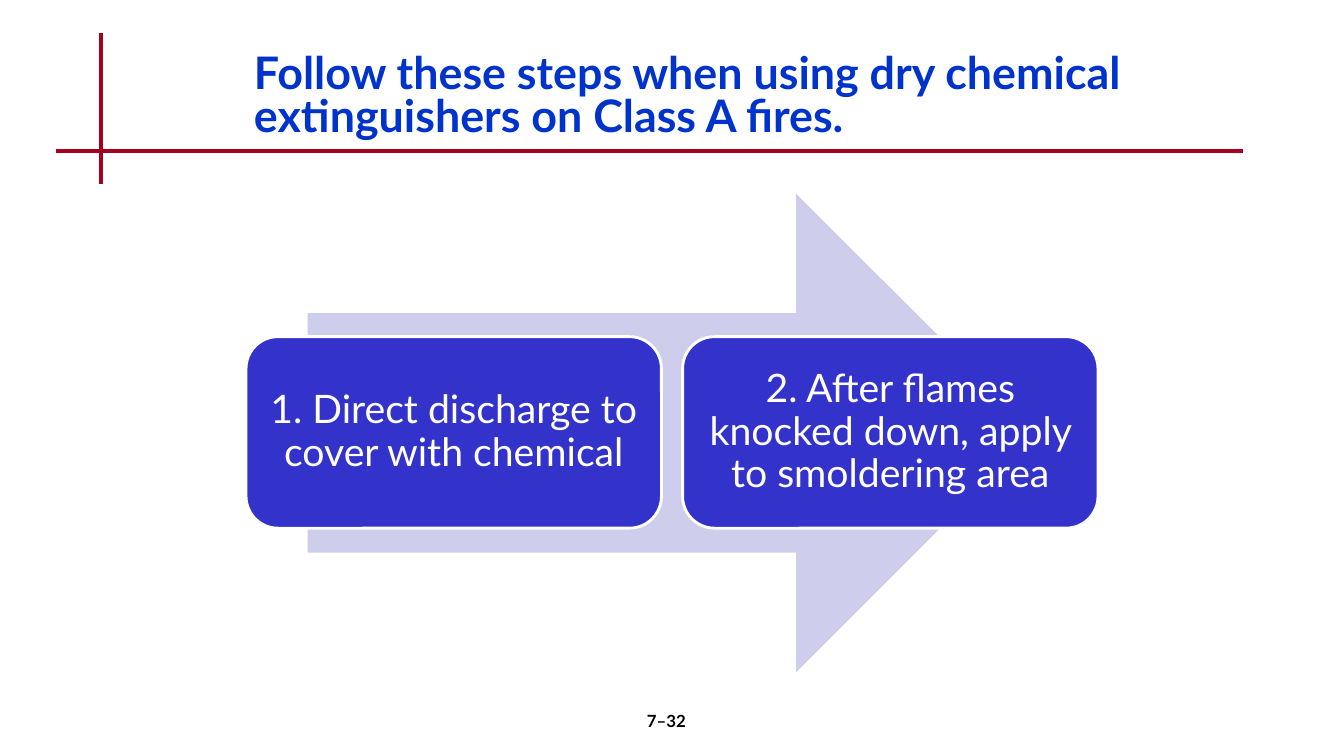
from lxml.etree import SubElement
from pptx import Presentation
from pptx.dml.color import RGBColor
from pptx.enum.shapes import MSO_CONNECTOR, MSO_SHAPE
from pptx.enum.text import MSO_ANCHOR, PP_ALIGN
from pptx.oxml.ns import qn
from pptx.util import Pt

PX = 9144  # EMU per px, 100 px to the inch
FONT = "Lato"
RULE_RED = RGBColor(0xA5, 0x00, 0x21)
ARROW_LILAC = RGBColor(0xCE, 0xCE, 0xEC)
STEP_BLUE = RGBColor(0x33, 0x33, 0xCC)
TITLE_BLUE = RGBColor(0x00, 0x33, 0xCC)
WHITE = RGBColor(0xFF, 0xFF, 0xFF)
BLACK = RGBColor(0x00, 0x00, 0x00)

TITLE = "Follow these steps when using dry chemical extinguishers on Class A fires."
STEPS = [
    "1. Direct discharge to cover with chemical",
    "2. After flames knocked down, apply to smoldering area",
]
STEP_LEFT, STEP_TOP, STEP_WIDTH, STEP_HEIGHT = 244, 334, 412, 190
STEP_PITCH = 433


def px(*lengths):
    return [length * PX for length in lengths]


def add_rule(page, x1, y1, x2, y2):
    rule = page.shapes.add_connector(MSO_CONNECTOR.STRAIGHT, *px(x1, y1, x2, y2))
    rule.line.color.rgb = RULE_RED
    rule.line.width = Pt(3)
    SubElement(rule._element.spPr, qn("a:effectLst"))


def add_filled_shape(page, kind, bounds, fill):
    shape = page.shapes.add_shape(kind, *px(*bounds))
    shape.shadow.inherit = False
    shape.fill.solid()
    shape.fill.fore_color.rgb = fill
    shape.line.fill.background()
    return shape


def write_text(box, text, size, color, bold=False, align=PP_ALIGN.LEFT, spacing=1.0):
    box.text_frame.word_wrap = True
    para = box.text_frame.paragraphs[0]
    para.alignment = align
    para.line_spacing = spacing
    span = para.add_run()
    span.text = text
    span.font.name = FONT
    span.font.size = Pt(size)
    span.font.bold = bold
    span.font.color.rgb = color


def add_step(page, index, text):
    bounds = (STEP_LEFT + index * STEP_PITCH, STEP_TOP, STEP_WIDTH, STEP_HEIGHT)
    step = add_filled_shape(page, MSO_SHAPE.ROUNDED_RECTANGLE, bounds, STEP_BLUE)
    step.line.color.rgb = WHITE
    step.line.width = Pt(2)
    frame = step.text_frame
    frame.vertical_anchor = MSO_ANCHOR.MIDDLE
    frame.margin_left, frame.margin_top, frame.margin_right, frame.margin_bottom = px(12, 12, 12, 12)
    write_text(step, text, 28, WHITE, align=PP_ALIGN.CENTER, spacing=0.9)


def add_label(page, bounds, text, size, color, **style):
    box = page.shapes.add_textbox(*px(*bounds))
    write_text(box, text, size, color, bold=True, **style)


def main():
    deck = Presentation()
    deck.slide_width, deck.slide_height = px(1333, 750)
    page = deck.slides.add_slide(deck.slide_layouts[6])

    add_rule(page, 100, 33, 100, 183)
    add_rule(page, 56, 150, 1233, 150)
    add_filled_shape(page, MSO_SHAPE.RIGHT_ARROW, (305, 192, 722, 475), ARROW_LILAC)
    for index, text in enumerate(STEPS):
        add_step(page, index, text)
    add_label(page, (242, 50, 925, 100), TITLE, 32, TITLE_BLUE, spacing=0.8)
    add_label(page, (522, 700, 278, 50), "7–32", 12, BLACK, align=PP_ALIGN.CENTER)

    deck.save("out.pptx")


if __name__ == "__main__":
    main()
